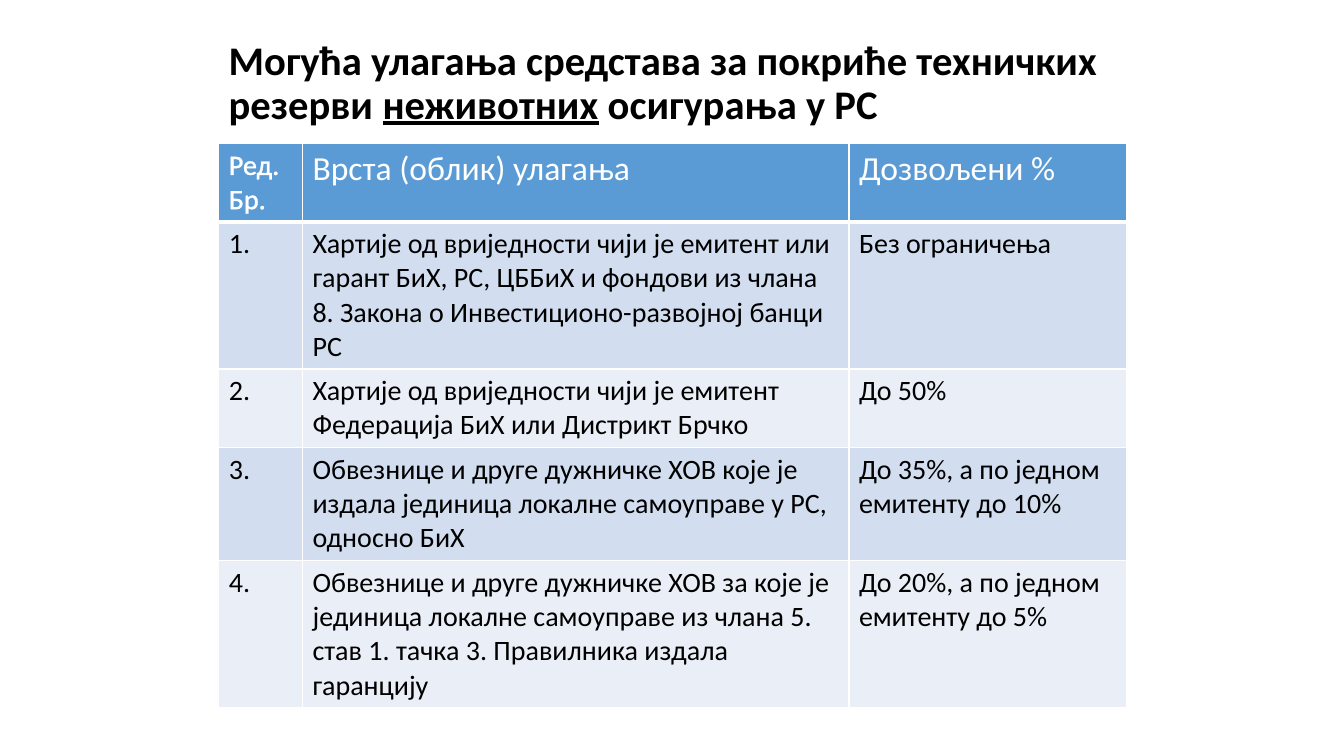
from lxml import etree
from pptx import Presentation
from pptx.dml.color import RGBColor
from pptx.enum.text import MSO_ANCHOR
from pptx.oxml.ns import qn
from pptx.util import Inches, Pt

MIDDLE = MSO_ANCHOR.MIDDLE
FONT = "Calibri"
COLORS = {"text": "000000", "white": "FFFFFF", "head": "5B9BD5",
          "odd": "D2DEEF", "even": "EAEFF7"}
LEFT, WIDTH = 2.17, 9
COLS = (0.83, 5.42, 2.75)
LINES = (2, 4, 2, 3, 4)
PITCH, MARGIN = 0.34, 0.1
TITLE = (("Могућа улагања средстава за покриће техничких резерви ", False),
         ("неживотних", True),
         (" осигурања у РС", False))
HEAD = ("Ред. Бр.", "Врста (облик) улагања", "Дозвољени %")
ITEMS = (
    ("Хартије од вриједности чији је емитент или гарант БиХ, РС, ЦББиХ и "
     "фондови из члана 8. Закона о Инвестиционо-развојној банци РС",
     "Без ограничења"),
    ("Хартије од вриједности чији је емитент Федерација БиХ или "
     "Дистрикт Брчко", "До 50%"),
    ("Обвезнице и друге дужничке ХОВ које је издала јединица локалне "
     "самоуправе у РС, односно БиХ", "До 35%, а по једном емитенту до 10%"),
    ("Обвезнице и друге дужничке ХОВ за које је јединица локалне самоуправе "
     "из члана 5. став 1. тачка 3. Правилника издала гаранцију",
     "До 20%, а по једном емитенту до 5%"),
)


def add_run(para, text, size, color):
    run = para.add_run()
    run.text = text
    run.font.name = FONT
    run.font.size = Pt(size)
    run.font.color.rgb = RGBColor.from_string(COLORS[color])
    return run


def make_line(tag, width):
    line = etree.Element(qn(tag), w=str(Pt(width)))
    fill = etree.SubElement(line, qn("a:solidFill"))
    etree.SubElement(fill, qn("a:srgbClr"), val=COLORS["white"])
    return line


def add_title(slide, left, top, width, height):
    box = slide.shapes.add_textbox(*map(Inches, (left, top, width, height)))
    frame = box.text_frame
    frame.word_wrap = True
    frame.vertical_anchor = MIDDLE
    para = frame.paragraphs[0]
    para.line_spacing = 0.9
    for text, under in TITLE:
        font = add_run(para, text, 29, "text").font
        font.bold = True
        font.underline = under


def fill_cell(cell, text, size, color, back, base):
    props = cell._tc.get_or_add_tcPr()
    for side, width in zip("LRTB", (1, 1, 1, base)):
        props.append(make_line("a:ln" + side, width))
    cell.fill.solid()
    cell.fill.fore_color.rgb = RGBColor.from_string(COLORS[back])
    return add_run(cell.text_frame.paragraphs[0], text, size, color)


def add_grid(slide, left, top, width):
    highs = [MARGIN + PITCH * count for count in LINES]
    frame = slide.shapes.add_table(
        len(LINES), len(COLS),
        *map(Inches, (left, top, width, sum(highs))))
    table = frame.table
    for col, size in zip(table.columns, COLS):
        col.width = Inches(size)
    for row, high in zip(table.rows, highs):
        row.height = Inches(high)
    for col, text in enumerate(HEAD):
        size = 24 if col else 20
        run = fill_cell(table.cell(0, col), text, size, "white", "head", 3)
        if col == 0:
            run.font._element.insert(0, make_line("a:ln", 1.45))
    for row, item in enumerate(ITEMS, 1):
        back = "odd" if row % 2 else "even"
        for col, text in enumerate((f"{row}.", *item)):
            fill_cell(table.cell(row, col), text, 20, "text", back, 1)


def main():
    deck = Presentation()
    deck.slide_width, deck.slide_height = Inches(13.33), Inches(7.5)
    slide = deck.slides.add_slide(deck.slide_layouts[6])
    add_title(slide, LEFT, 0.25, WIDTH, 1.17)
    add_grid(slide, LEFT, 1.42, WIDTH)
    deck.save("out.pptx")


if __name__ == "__main__":
    main()
